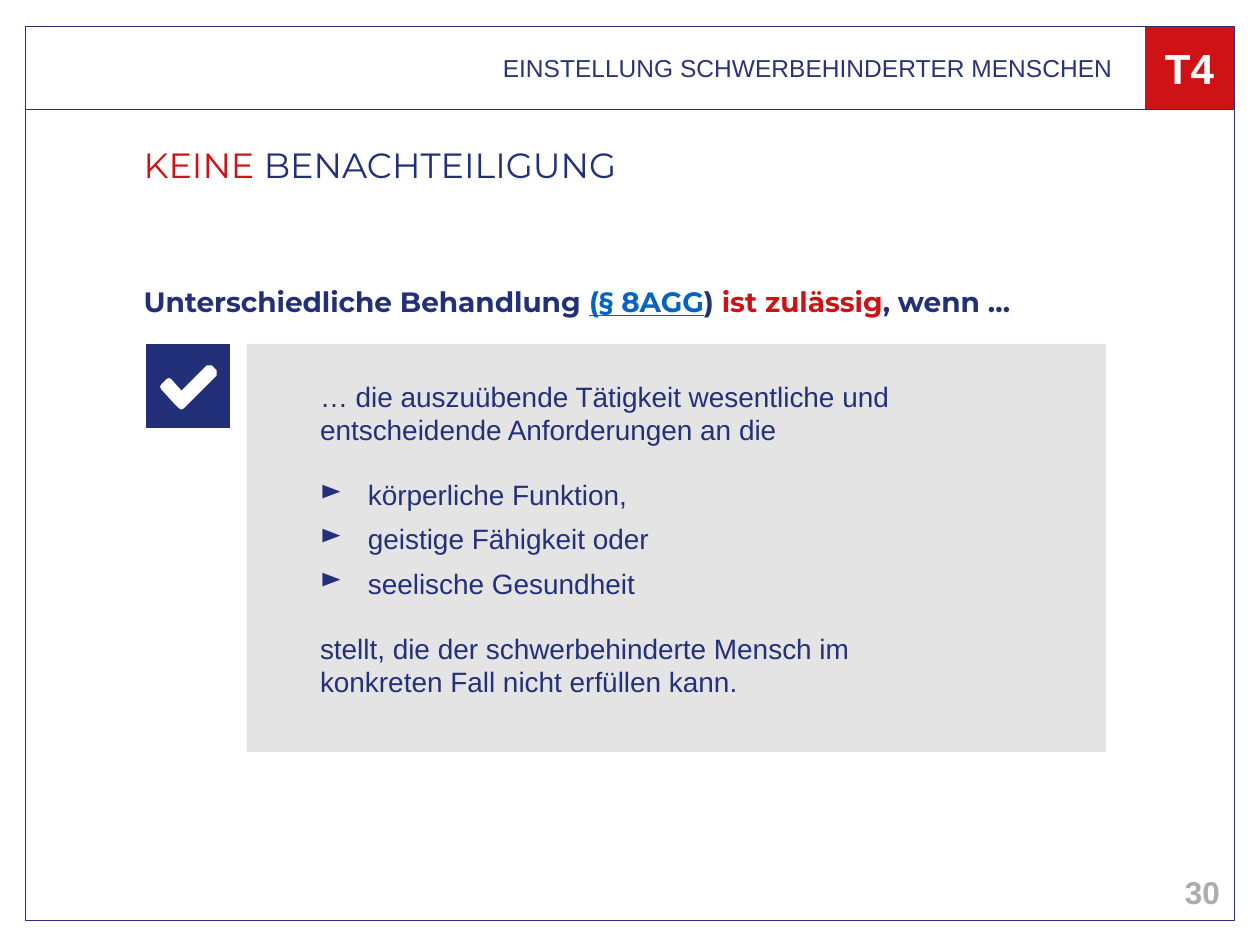
from dataclasses import dataclass
from typing import Optional

from lxml import etree
from pptx import Presentation
from pptx.dml.color import RGBColor
from pptx.enum.shapes import MSO_SHAPE
from pptx.enum.text import MSO_ANCHOR, PP_ALIGN
from pptx.oxml.ns import qn
from pptx.util import Inches, Pt

RECTANGLE = MSO_SHAPE.RECTANGLE
TOP, MIDDLE = MSO_ANCHOR.TOP, MSO_ANCHOR.MIDDLE
LEFT, CENTER, RIGHT = PP_ALIGN.LEFT, PP_ALIGN.CENTER, PP_ALIGN.RIGHT

RED = RGBColor(0xCD, 0x13, 0x16)
NAVY = RGBColor(0x22, 0x2F, 0x79)
BODY_NAVY = RGBColor(0x23, 0x30, 0x7A)
FRAME_NAVY = RGBColor(0x2C, 0x34, 0x77)
LINK_BLUE = RGBColor(0x05, 0x63, 0xC1)
NUMBER_GRAY = RGBColor(0xAC, 0xAC, 0xAC)
PANEL_GRAY = RGBColor(0xE4, 0xE4, 0xE4)
PANEL_EDGE = RGBColor(0xE2, 0xE2, 0xE3)
WHITE = RGBColor(0xFF, 0xFF, 0xFF)

BULLET_INDENT = Inches(0.38)
CHECK_MARK = [
    (1.28, 3.09), (1.27, 3.07), (1.28, 3.05), (1.32, 3.01), (1.34, 3.0),
    (1.36, 3.01), (1.44, 3.1), (1.64, 2.9), (1.66, 2.9), (1.68, 2.9),
    (1.72, 2.94), (1.72, 2.96), (1.72, 2.98), (1.5, 3.2), (1.46, 3.24),
    (1.44, 3.25), (1.42, 3.24), (1.38, 3.2),
]


@dataclass(frozen=True)
class Area:
    left: float
    top: float
    width: float
    height: float

    def lengths(self) -> list:
        return [Inches(value) for value in (self.left, self.top, self.width, self.height)]


@dataclass(frozen=True)
class Panel:
    area: Area
    fill: Optional[RGBColor]
    line: RGBColor
    weight: float = 0.25


@dataclass(frozen=True)
class Style:
    size: float
    font: str = "Arial"
    bold: bool = False


@dataclass(frozen=True)
class Span:
    text: str
    color: RGBColor
    underline: bool = False


@dataclass(frozen=True)
class Para:
    spans: tuple
    after: float = 0
    bullet: bool = False


@dataclass(frozen=True)
class TextBlock:
    area: Area
    style: Style
    paras: tuple
    align: PP_ALIGN = LEFT
    anchor: MSO_ANCHOR = TOP
    right_inset: float = 0
    line_spacing: float = 1.0


HEADER_TOP, HEADER_HEIGHT = 0.21, 0.66
BADGE = Area(9.09, HEADER_TOP, 0.7, HEADER_HEIGHT)

PANELS = [
    Panel(BADGE, RED, RED),
    Panel(Area(0.2, HEADER_TOP, 9.6, HEADER_HEIGHT), None, FRAME_NAVY),
    Panel(Area(0.2, HEADER_TOP, 9.6, 7.09), None, FRAME_NAVY),
    Panel(Area(1.96, 2.73, 6.81, 3.23), PANEL_GRAY, PANEL_EDGE),
    Panel(Area(1.14, 2.71, 0.71, 0.71), NAVY, WHITE, 3),
]


def body_para(text: str, after: float = 18, bullet: bool = False) -> Para:
    return Para((Span(text, BODY_NAVY),), after, bullet)


TEXTS = [
    TextBlock(Area(1.14, 1.18, 7.63, 0.66), Style(20, "Montserrat"),
              (Para((Span("KEINE", RED), Span(" BENACHTEILIGUNG", NAVY))),),
              line_spacing=0.9),
    TextBlock(Area(7.53, 6.88, 2.25, 0.4), Style(18, bold=True),
              (Para((Span("30", NUMBER_GRAY),)),), RIGHT, MIDDLE, 0.1),
    TextBlock(Area(0.2, HEADER_TOP, 8.89, HEADER_HEIGHT), Style(14),
              (Para((Span("EINSTELLUNG SCHWERBEHINDERTER MENSCHEN", FRAME_NAVY),)),),
              RIGHT, MIDDLE, 0.26),
    TextBlock(Area(1.14, 2.18, 7.64, 0.5), Style(16, "Montserrat", True),
              (Para((Span("Unterschiedliche Behandlung ", NAVY),
                     Span("(§ 8AGG", LINK_BLUE, True),
                     Span(") ", NAVY),
                     Span("ist zulässig", RED),
                     Span(", wenn …", NAVY))),),
              line_spacing=1.3),
    TextBlock(BADGE, Style(24, bold=True),
              (Para((Span("T4", WHITE),)),), CENTER, MIDDLE),
    TextBlock(Area(2.54, 3.01, 5.2, 2.76), Style(16), (
        body_para("… die auszuübende Tätigkeit wesentliche und "
                  "entscheidende Anforderungen an die"),
        body_para("körperliche Funktion,", 6, True),
        body_para("geistige Fähigkeit oder", 6, True),
        body_para("seelische Gesundheit", 18, True),
        body_para("stellt, die der schwerbehinderte Mensch im "
                  "konkreten Fall nicht erfüllen kann."),
    )),
]


def add_panel(page, panel: Panel) -> None:
    shape = page.shapes.add_shape(RECTANGLE, *panel.area.lengths())
    shape.shadow.inherit = False
    if panel.fill is None:
        shape.fill.background()
    else:
        shape.fill.solid()
        shape.fill.fore_color.rgb = panel.fill
    shape.line.color.rgb = panel.line
    shape.line.width = Pt(panel.weight)


def add_bullet(paragraph) -> None:
    properties = paragraph._p.get_or_add_pPr()
    properties.set("marL", str(BULLET_INDENT))
    properties.set("indent", str(-BULLET_INDENT))
    etree.SubElement(properties, qn("a:buChar")).set("char", "►")


def add_text(page, block: TextBlock) -> None:
    frame = page.shapes.add_textbox(*block.area.lengths()).text_frame
    frame.word_wrap = True
    frame.vertical_anchor = block.anchor
    frame.margin_left = frame.margin_top = frame.margin_bottom = 0
    frame.margin_right = Inches(block.right_inset)
    for index, para in enumerate(block.paras):
        paragraph = frame.add_paragraph() if index else frame.paragraphs[0]
        if para.bullet:
            add_bullet(paragraph)
        paragraph.alignment = block.align
        paragraph.line_spacing = block.line_spacing
        paragraph.space_after = Pt(para.after)
        for span in para.spans:
            run = paragraph.add_run()
            run.text = span.text
            run.font.name = block.style.font
            run.font.size = Pt(block.style.size)
            run.font.bold = block.style.bold
            run.font.underline = span.underline
            run.font.color.rgb = span.color


def add_check_mark(page) -> None:
    points = [(Inches(x), Inches(y)) for x, y in CHECK_MARK]
    builder = page.shapes.build_freeform(*points[0])
    builder.add_line_segments(points[1:], close=True)
    check = builder.convert_to_shape()
    check.shadow.inherit = False
    check.fill.solid()
    check.fill.fore_color.rgb = WHITE
    check.line.fill.background()


def main() -> None:
    """Build the slide on unequal treatment and save it."""
    deck = Presentation()
    deck.slide_width, deck.slide_height = Inches(10), Inches(7.5)
    page = deck.slides.add_slide(deck.slide_layouts[6])
    for panel in PANELS:
        add_panel(page, panel)
    add_check_mark(page)
    for block in TEXTS:
        add_text(page, block)
    deck.save("out.pptx")


if __name__ == "__main__":
    main()
